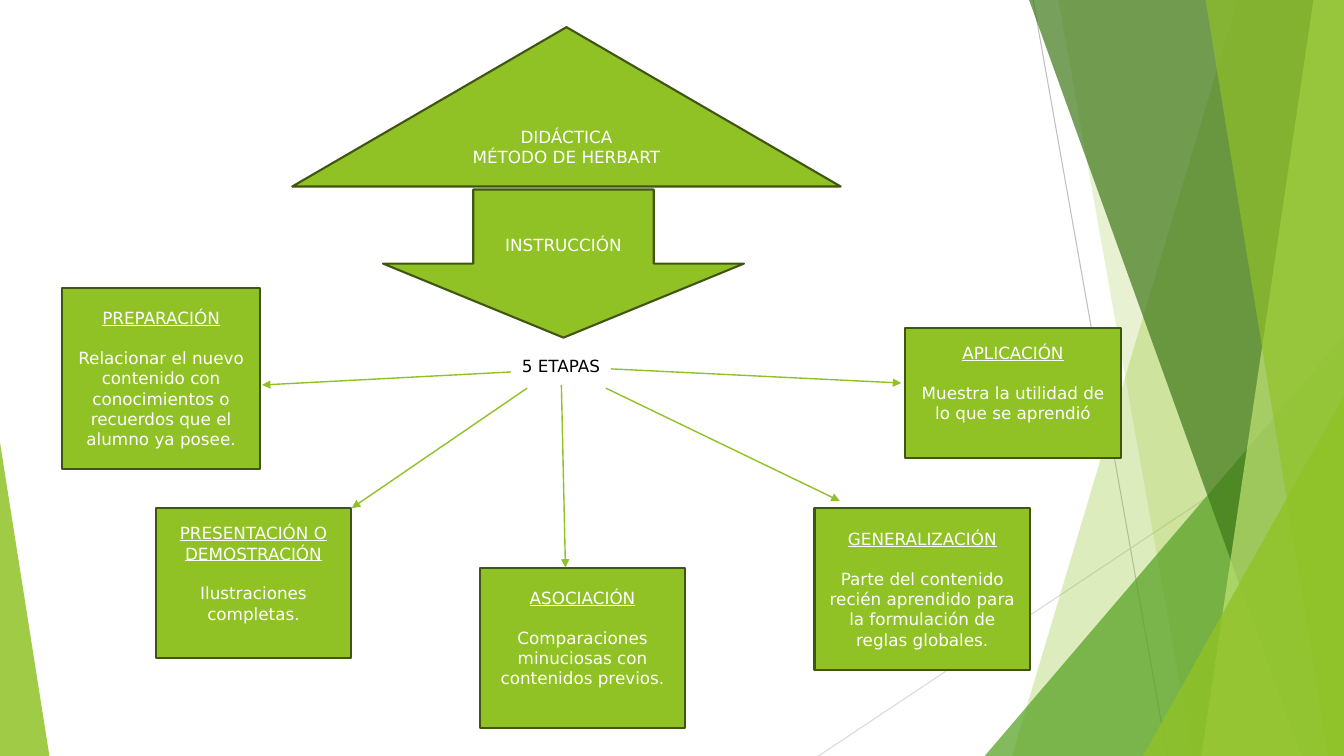
from lxml.etree import SubElement
from pptx import Presentation
from pptx.dml.color import RGBColor
from pptx.enum.dml import MSO_LINE
from pptx.enum.shapes import MSO_CONNECTOR, MSO_SHAPE
from pptx.enum.text import MSO_ANCHOR, PP_ALIGN
from pptx.oxml.ns import qn
from pptx.util import Pt

LIME = RGBColor(0x90, 0xC2, 0x26)
PALE = RGBColor(0xC0, 0xE4, 0x74)
GREEN = RGBColor(0x54, 0xA0, 0x21)
DARK = RGBColor(0x3F, 0x78, 0x19)
EDGE = RGBColor(0x3F, 0x55, 0x11)
GREY = RGBColor(0xBF, 0xBF, 0xBF)
MIST = RGBColor(0xD9, 0xD9, 0xD9)
WHITE = RGBColor(0xFF, 0xFF, 0xFF)
BLACK = RGBColor(0, 0, 0)

FONT = "DejaVu Sans"
SIZE = 12
GAP = 14.1
WIDE, HIGH = 960, 540

RAYS = [
    ((738, 0, 833.8, HIGH), GREY),
    ((WIDE, 290.2, 584.6, HIGH), MIST),
]
# kind, then top and foot x for a panel, or left, top, right, tip for a wedge
DECOR = [
    ("panel", (884.2, 722.9), LIME, 30),
    ("panel", (756, 851.8), LIME, 20),
    ("wedge", (703.4, 239.8, WIDE, 1), GREEN, 72),
    ("panel", (735.1, 929.5), DARK, 70),
    ("panel", (938.2, 858.2), PALE, 70),
    ("panel", (861.1, 949), LIME, 65),
    ("wedge", (816.5, 283, WIDE, 1), LIME, 80),
    ("wedge", (0, 316.1, 35.3, 0), LIME, 85),
]
HEADS = [
    (MSO_SHAPE.ISOSCELES_TRIANGLE, (208.8, 19.4, 391.7, 113.8),
     "DIDÁCTICA\nMÉTODO DE HERBART"),
    (MSO_SHAPE.DOWN_ARROW, (273.6, 135.4, 257.8, 105.8), "INSTRUCCIÓN"),
]
HUB = ((279.4, 250.6, 242.6, 21.6), "5 ETAPAS")
# box, title, body, free lines below the body, arrow
STAGES = [
    ((44.6, 205.9, 141.1, 128.9), "PREPARACIÓN",
     "Relacionar el nuevo contenido con conocimientos o recuerdos que el alumno ya posee.",
     0, (365, 265.7, 187.2, 275)),
    ((111.6, 362.9, 139, 107.3), "PRESENTACIÓN O DEMOSTRACIÓN",
     "Ilustraciones completas.",
     1, (376.6, 277.2, 251.3, 362.9)),
    ((342.7, 405.4, 146.9, 114.5), "ASOCIACIÓN",
     "Comparaciones minuciosas con contenidos previos.",
     1, (401, 275, 403.9, 405.4)),
    ((581.8, 362.9, 154.1, 115.9), "GENERALIZACIÓN",
     "Parte del contenido recién aprendido para la formulación de reglas globales.",
     0, (432.7, 277.2, 599.8, 357.8)),
    ((646.6, 234, 154.1, 92.9), "APLICACIÓN",
     "Muestra la utilidad de lo que se aprendió",
     1, (436.3, 263.5, 643.7, 273.6)),
]

deck = Presentation()
deck.slide_width, deck.slide_height = Pt(WIDE), Pt(HIGH)
slide = deck.slides.add_slide(deck.slide_layouts[6])
shapes = slide.shapes


def pts(nums):
    return [Pt(n) for n in nums]


def add_line(ends, color, width, arrow=False):
    line = shapes.add_connector(MSO_CONNECTOR.STRAIGHT, *pts(ends))
    line.line.color.rgb = color
    line.line.width = Pt(width)
    line.line.dash_style = MSO_LINE.SOLID
    if arrow:
        SubElement(line.line._get_or_add_ln(), qn("a:tailEnd"), type="triangle")
    SubElement(line._element.spPr, qn("a:effectLst"))


def paint(shape, color, alpha=100):
    shape.shadow.inherit = False
    shape.fill.solid()
    shape.fill.fore_color.rgb = color
    if alpha < 100:
        tint = shape._element.spPr.find(qn("a:solidFill"))[0]
        SubElement(tint, qn("a:alpha"), val=str(alpha * 1000))
        shape.line.fill.background()
    else:
        shape.line.color.rgb = EDGE
        shape.line.width = Pt(1.5)


def write(shape, text, color):
    frame = shape.text_frame
    frame.text = text
    frame.word_wrap = True
    for para in frame.paragraphs:
        para.alignment = PP_ALIGN.CENTER
        for run in para.runs:
            run.font.name = FONT
            run.font.size = Pt(SIZE)
            run.font.color.rgb = color
    return frame


def add_block(kind, box, text):
    shape = shapes.add_shape(kind, *pts(box))
    paint(shape, LIME)
    frame = write(shape, text, WHITE)
    frame.vertical_anchor = MSO_ANCHOR.MIDDLE
    return frame


def add_panel(top, foot):
    pen = shapes.build_freeform(Pt(top), 0)
    pen.add_line_segments(
        [pts(p) for p in ((WIDE, 0), (WIDE, HIGH), (foot, HIGH))], close=True)
    return pen.convert_to_shape()


def add_wedge(left, top, right, tip):
    box = pts((left, top, right - left, HIGH - top))
    shape = shapes.add_shape(MSO_SHAPE.ISOSCELES_TRIANGLE, *box)
    shape.adjustments[0] = tip
    return shape


for ends, color in RAYS:
    add_line(ends, color, 0.75)

for kind, place, color, alpha in DECOR:
    draw = add_panel if kind == "panel" else add_wedge
    paint(draw(*place), color, alpha)

for kind, box, text in HEADS:
    add_block(kind, box, text)

box, text = HUB
write(shapes.add_textbox(*pts(box)), text, BLACK)

for box, title, body, free, ends in STAGES:
    frame = add_block(MSO_SHAPE.RECTANGLE, box, f"{title}\n{body}")
    frame.margin_bottom = Pt(3.6 + free * GAP)
    head, note = frame.paragraphs
    head.runs[0].font.underline = True
    note.space_before = Pt(GAP)

for *rest, ends in STAGES:
    add_line(ends, LIME, 1, arrow=True)

deck.save("out.pptx")
